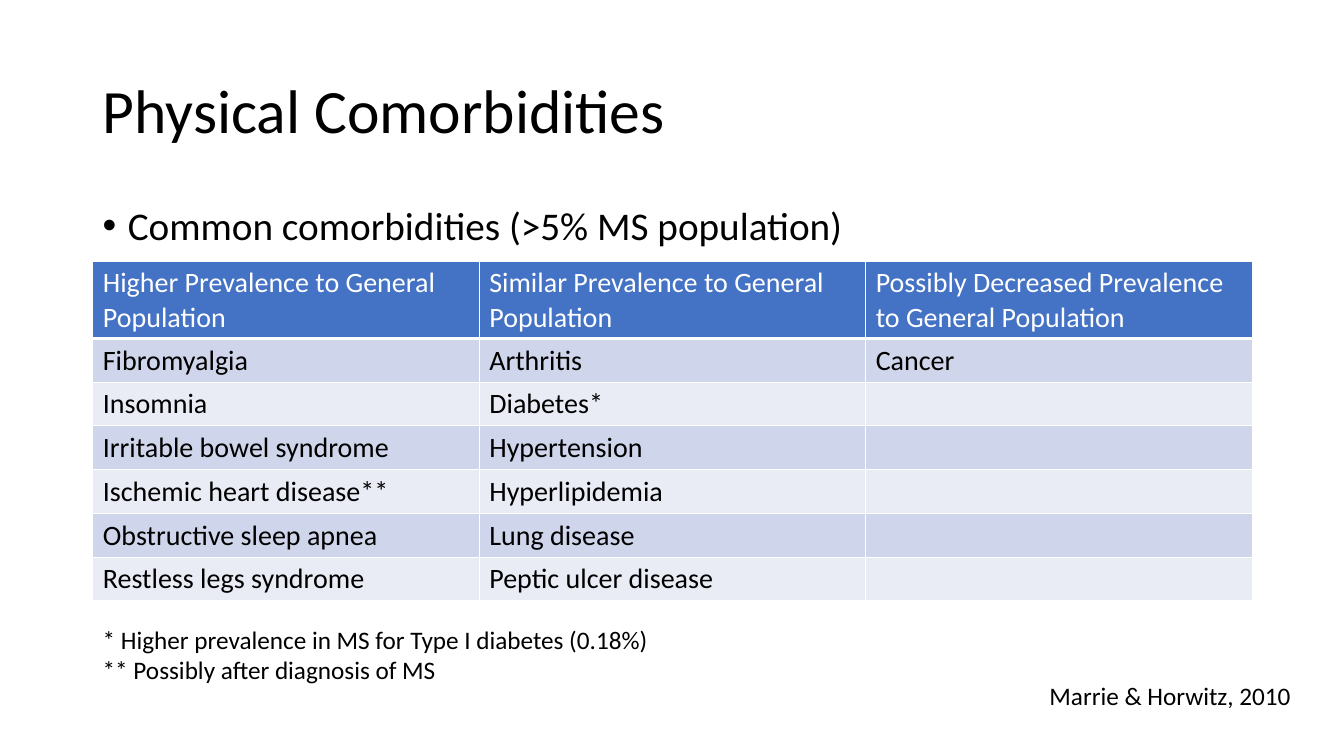
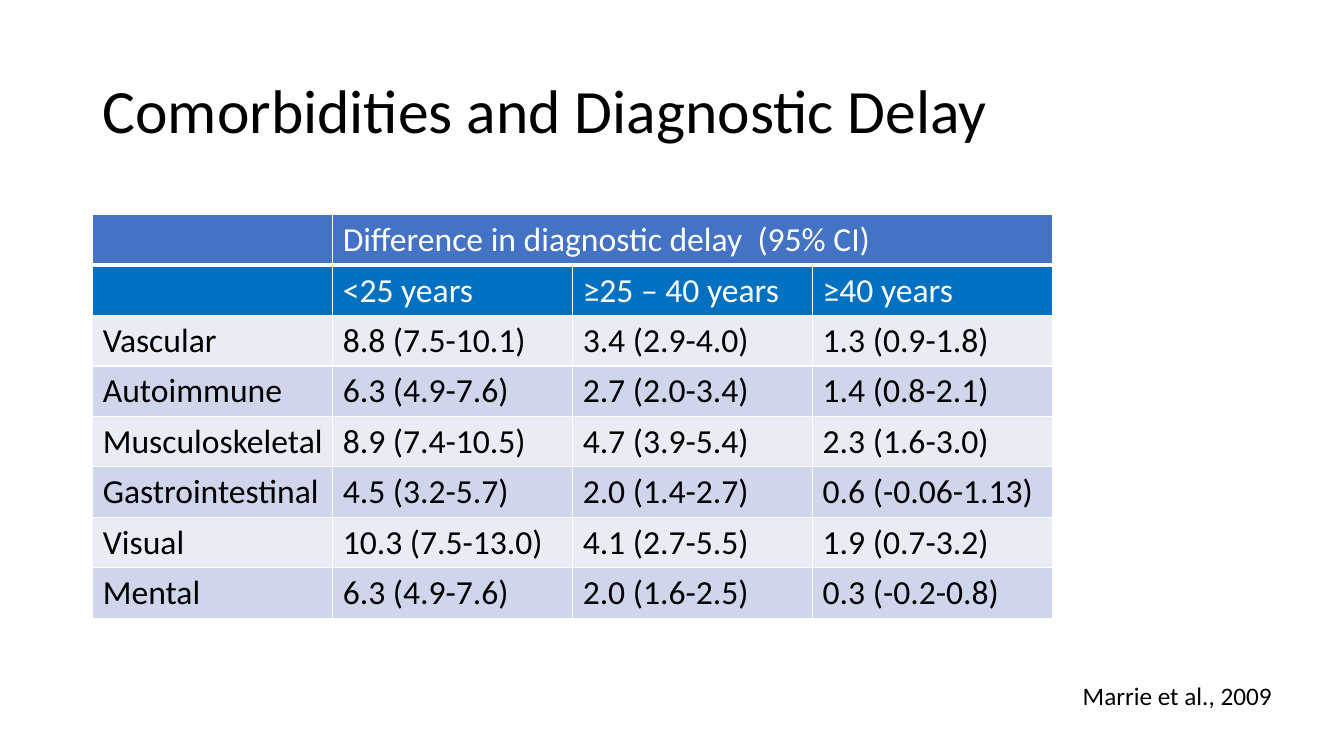
"""Build two slides on comorbidities in MS."""
from dataclasses import dataclass

from lxml.etree import SubElement
from pptx import Presentation
from pptx.dml.color import RGBColor
from pptx.enum.text import MSO_ANCHOR as Anchor
from pptx.oxml.ns import qn
from pptx.slide import Slide
from pptx.table import _Cell as Cell
from pptx.text.text import TextFrame
from pptx.util import Inches, Pt

FONT = "Calibri"
BLACK = RGBColor(0x00, 0x00, 0x00)
WHITE = RGBColor(0xFF, 0xFF, 0xFF)
HEADER_BLUE = RGBColor(0x44, 0x72, 0xC4)
SUBHEADER_BLUE = RGBColor(0x00, 0x70, 0xC0)
DARK_BAND = RGBColor(0xCF, 0xD5, 0xEA)
LIGHT_BAND = RGBColor(0xE9, 0xEB, 0xF5)
BANDS = (DARK_BAND, LIGHT_BAND)

LEFT = 0.92
CONTENT_WIDTH = 11.5
NOTE_SIZE = 18


@dataclass(frozen=True)
class TextBox:
    text: str
    left: float
    top: float
    width: float
    height: float
    size: int
    anchor: Anchor = Anchor.TOP
    line_spacing: float = 1.0
    bullet: bool = False


@dataclass(frozen=True)
class DataTable:
    rows: tuple[tuple[str, ...], ...]
    top: float
    column_width: float
    header_height: float
    row_height: float
    size: int
    header_fills: tuple[RGBColor, ...]
    merge_header_from: int | None = None


@dataclass(frozen=True)
class SlideContent:
    title: str
    citation: str
    citation_left: float
    citation_width: float
    table: DataTable
    boxes: tuple[TextBox, ...] = ()


COMORBIDITIES = SlideContent(
    title="Physical Comorbidities",
    citation="Marrie & Horwitz, 2010",
    citation_left=10.31,
    citation_width=2.82,
    table=DataTable(
        rows=(
            (
                "Higher Prevalence to General Population",
                "Similar Prevalence to General Population",
                "Possibly Decreased Prevalence to General Population",
            ),
            ("Fibromyalgia", "Arthritis", "Cancer"),
            ("Insomnia", "Diabetes*", ""),
            ("Irritable bowel syndrome", "Hypertension", ""),
            ("Ischemic heart disease**", "Hyperlipidemia", ""),
            ("Obstructive sleep apnea", "Lung disease", ""),
            ("Restless legs syndrome", "Peptic ulcer disease", ""),
        ),
        top=2.59,
        column_width=CONTENT_WIDTH / 3,
        header_height=0.76,
        row_height=0.43,
        size=20,
        header_fills=(HEADER_BLUE,),
    ),
    boxes=(
        TextBox(
            "Common comorbidities (>5% MS population)",
            LEFT, 2, CONTENT_WIDTH, 0.55, 28, line_spacing=0.9, bullet=True,
        ),
        TextBox(
            "* Higher prevalence in MS for Type I diabetes (0.18%)\n"
            "** Possibly after diagnosis of MS",
            LEFT, 6.14, 6.25, 0.71, NOTE_SIZE,
        ),
    ),
)

DIAGNOSTIC_DELAY = SlideContent(
    title="Comorbidities and Diagnostic Delay",
    citation="Marrie et al., 2009",
    citation_left=10.64,
    citation_width=2.49,
    table=DataTable(
        rows=(
            ("", "Difference in diagnostic delay  (95% CI)", "", ""),
            ("", "<25 years", "≥25 – 40 years", "≥40 years"),
            ("Vascular", "8.8 (7.5-10.1)", "3.4 (2.9-4.0)", "1.3 (0.9-1.8)"),
            ("Autoimmune", "6.3 (4.9-7.6)", "2.7 (2.0-3.4)", "1.4 (0.8-2.1)"),
            ("Musculoskeletal", "8.9 (7.4-10.5)", "4.7 (3.9-5.4)", "2.3 (1.6-3.0)"),
            ("Gastrointestinal", "4.5 (3.2-5.7)", "2.0 (1.4-2.7)", "0.6 (-0.06-1.13)"),
            ("Visual", "10.3 (7.5-13.0)", "4.1 (2.7-5.5)", "1.9 (0.7-3.2)"),
            ("Mental", "6.3 (4.9-7.6)", "2.0 (1.6-2.5)", "0.3 (-0.2-0.8)"),
        ),
        top=2.13,
        column_width=2.38,
        header_height=0.5,
        row_height=0.5,
        size=24,
        header_fills=(HEADER_BLUE, SUBHEADER_BLUE),
        merge_header_from=1,
    ),
)


def format_text(frame: TextFrame, size: int, color: RGBColor) -> None:
    for paragraph in frame.paragraphs:
        for run in paragraph.runs:
            run.font.name = FONT
            run.font.size = Pt(size)
            run.font.color.rgb = color


def add_text(slide: Slide, box: TextBox) -> None:
    shape = slide.shapes.add_textbox(
        Inches(box.left), Inches(box.top), Inches(box.width), Inches(box.height)
    )
    frame = shape.text_frame
    frame.word_wrap = True
    frame.vertical_anchor = box.anchor
    frame.text = box.text
    format_text(frame, box.size, BLACK)
    for paragraph in frame.paragraphs:
        paragraph.line_spacing = box.line_spacing
        if box.bullet:
            properties = paragraph._p.get_or_add_pPr()
            properties.set("marL", str(Inches(0.25)))
            properties.set("indent", str(Inches(-0.25)))
            SubElement(properties, qn("a:buFont"), typeface="Arial")
            SubElement(properties, qn("a:buChar"), char="•")


def set_borders(cell: Cell, bottom_width: int) -> None:
    properties = cell._tc.get_or_add_tcPr()
    for side, width in (("L", 1), ("R", 1), ("T", 1), ("B", bottom_width)):
        line = SubElement(properties, qn(f"a:ln{side}"), w=str(Pt(width)))
        fill = SubElement(line, qn("a:solidFill"))
        SubElement(fill, qn("a:srgbClr"), val=str(WHITE))


def add_data_table(slide: Slide, data: DataTable) -> None:
    row_count, column_count = len(data.rows), len(data.rows[0])
    height = data.header_height + (row_count - 1) * data.row_height
    table = slide.shapes.add_table(
        row_count, column_count, Inches(LEFT), Inches(data.top),
        Inches(data.column_width * column_count), Inches(height),
    ).table
    for column in table.columns:
        column.width = Inches(data.column_width)
    header_count = len(data.header_fills)
    for row_index, texts in enumerate(data.rows):
        is_header = row_index < header_count
        fill = data.header_fills[row_index] if is_header else BANDS[(row_index - 1) % 2]
        row_height = data.row_height if row_index else data.header_height
        table.rows[row_index].height = Inches(row_height)
        for column_index, text in enumerate(texts):
            cell = table.cell(row_index, column_index)
            set_borders(cell, 1 if row_index else 3)
            cell.fill.solid()
            cell.fill.fore_color.rgb = fill
            cell.text_frame.text = text
            format_text(cell.text_frame, data.size, WHITE if is_header else BLACK)
    if data.merge_header_from is not None:
        table.cell(0, data.merge_header_from).merge(table.cell(0, column_count - 1))


def add_content(slide: Slide, content: SlideContent) -> None:
    title = TextBox(
        content.title, LEFT, 0.4, CONTENT_WIDTH, 1.45, 44, Anchor.MIDDLE, 0.9
    )
    citation = TextBox(
        content.citation, content.citation_left, 6.7, content.citation_width,
        0.4, NOTE_SIZE,
    )
    for box in (title, *content.boxes, citation):
        add_text(slide, box)
    add_data_table(slide, content.table)


def main() -> None:
    presentation = Presentation()
    presentation.slide_width = Inches(13.33)
    presentation.slide_height = Inches(7.5)
    blank_layout = presentation.slide_layouts[6]
    for content in (COMORBIDITIES, DIAGNOSTIC_DELAY):
        add_content(presentation.slides.add_slide(blank_layout), content)
    presentation.save("out.pptx")


if __name__ == "__main__":
    main()
